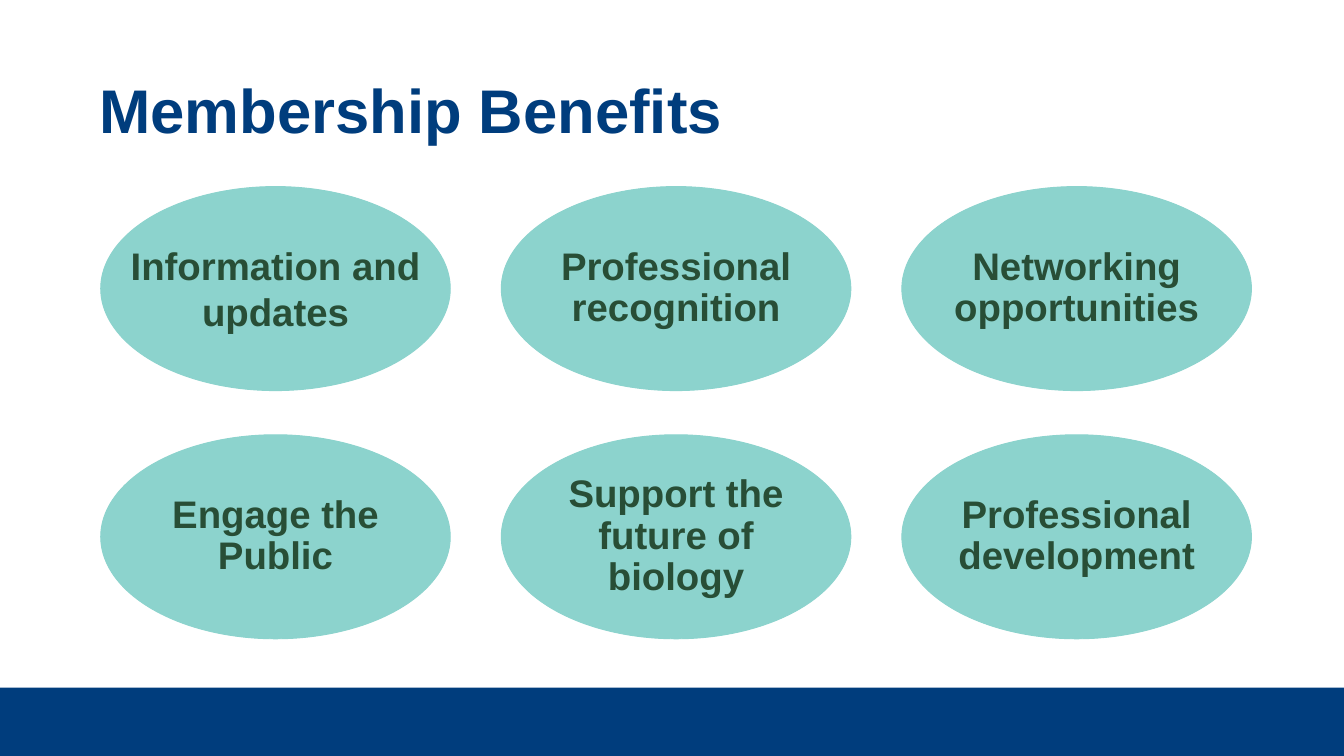
"""Build the Membership Benefits slide: a title, six ovals and a footer bar."""
from pptx import Presentation
from pptx.dml.color import RGBColor
from pptx.enum import shapes, text
from pptx.util import Pt

HUES = {"navy": "003D7D", "teal": "8CD3CD", "green": "284E36"}
WIDE, HIGH = 1401.1, 787.7

deck = Presentation()
deck.slide_width, deck.slide_height = Pt(WIDE), Pt(HIGH)
slide = deck.slides.add_slide(deck.slide_layouts[6])


def paint(shape, hue):
    shape.shadow.inherit = False
    shape.fill.solid()
    shape.fill.fore_color.rgb = RGBColor.from_string(HUES[hue])


def write(shape, words, size, hue, align, inset, gap=0.9):
    frame = shape.text_frame
    frame.word_wrap = True
    frame.vertical_anchor = text.MSO_ANCHOR.MIDDLE
    frame.margin_left = frame.margin_right = Pt(inset)
    para = frame.paragraphs[0]
    para.text = words
    para.alignment = align
    para.line_spacing = gap
    font = para.font
    font.name, font.size, font.bold = "Arial", Pt(size), True
    font.color.rgb = RGBColor.from_string(HUES[hue])


bar = slide.shapes.add_shape(shapes.MSO_SHAPE.RECTANGLE, 0, Pt(716.4), Pt(WIDE), Pt(HIGH - 716.4))
paint(bar, "navy")
bar.line.fill.background()

title = slide.shapes.add_textbox(Pt(96.5), Pt(41.8), Pt(1304.6 - 0.1), Pt(152.6))
title.width = Pt(1208.2)
write(title, "Membership Benefits", 64.2, "navy", text.PP_ALIGN.LEFT, 7.2)

perks = [
    "Information and updates", "Professional recognition", "Networking opportunities",
    "Engage the Public", "Support the future of biology", "Professional development",
]
for i, perk in enumerate(perks):
    row, col = divmod(i, 3)
    oval = slide.shapes.add_shape(
        shapes.MSO_SHAPE.OVAL, Pt(105 + col * 417.6), Pt(194.4 + row * 258.6), Pt(364.4), Pt(212.6))
    paint(oval, "teal")
    oval.line.color.rgb = RGBColor.from_string(HUES["teal"])
    oval.line.width = Pt(1)
    write(oval, perk, 40, "green", text.PP_ALIGN.CENTER, -28, gap=0.9 if i else 1.0)

deck.save("out.pptx")
